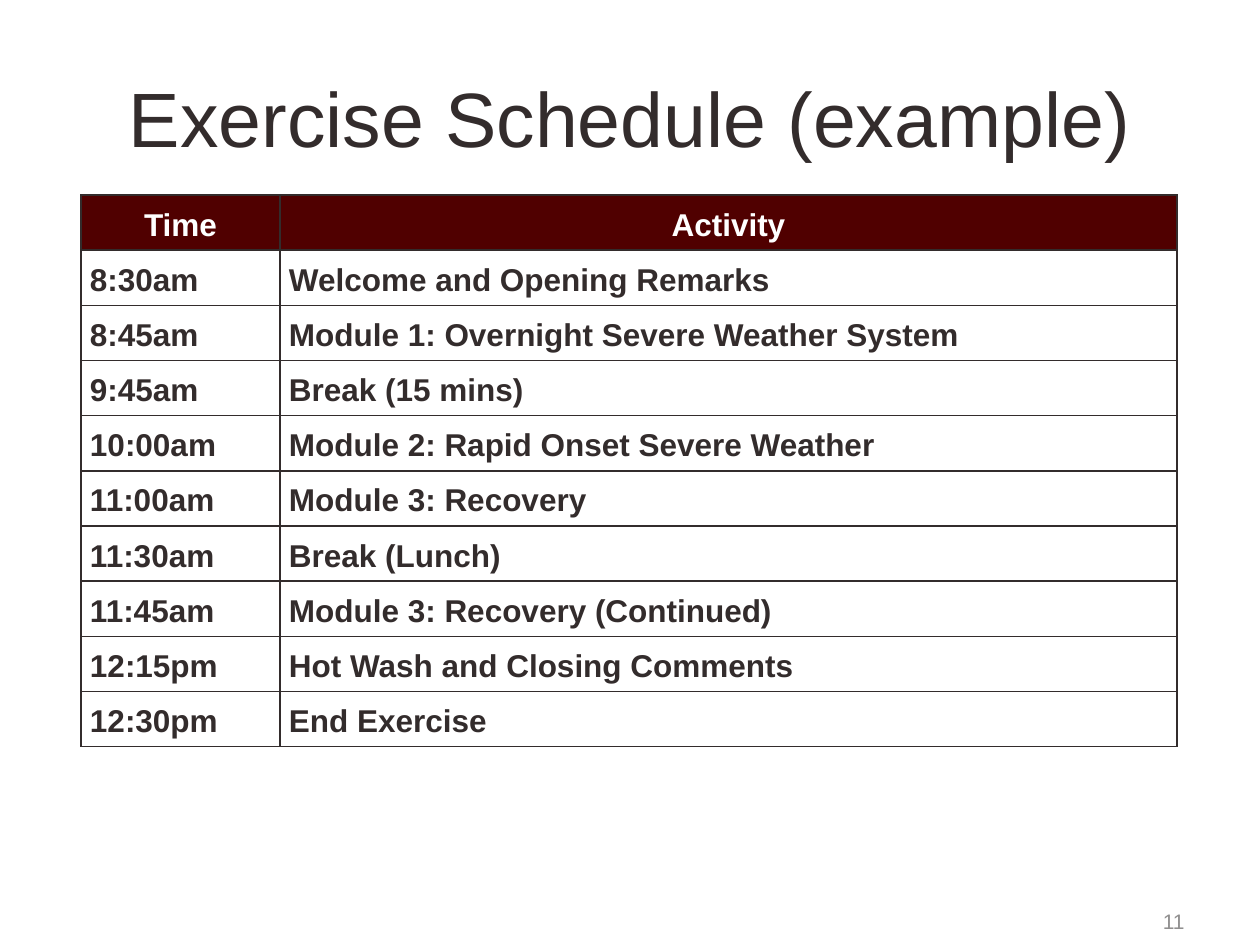
from dataclasses import dataclass

from lxml import etree
from pptx import Presentation
from pptx import util as u
from pptx.dml.color import RGBColor
from pptx.enum import text
from pptx.oxml.ns import qn


@dataclass(frozen=True)
class Theme:
    font: str = "Arial"
    ink: str = "332C2C"
    header_fill: str = "500000"
    header_ink: str = "FFFFFF"
    muted: str = "908F8F"
    title_size: int = 44
    table_size: int = 18
    number_size: int = 12
    border_width: int = 1


theme = Theme()
PX_PER_INCH = 126


def px(length):
    return u.Emu(round(length * 914400 / PX_PER_INCH))


def add_run(paragraph, words, size, color, bold=False):
    run = paragraph.add_run()
    run.text = words
    run.font.name = theme.font
    run.font.size = u.Pt(size)
    run.font.bold = bold
    run.font.color.rgb = RGBColor.from_string(color)


schedule = [
    ("Time", "Activity"),
    ("8:30am", "Welcome and Opening Remarks"),
    ("8:45am", "Module 1: Overnight Severe Weather System"),
    ("9:45am", "Break (15 mins)"),
    ("10:00am", "Module 2: Rapid Onset Severe Weather"),
    ("11:00am", "Module 3: Recovery"),
    ("11:30am", "Break (Lunch)"),
    ("11:45am", "Module 3: Recovery (Continued)"),
    ("12:15pm", "Hot Wash and Closing Comments"),
    ("12:30pm", "End Exercise"),
]

presentation = Presentation()
presentation.slide_width = px(1260)
presentation.slide_height = px(945)
slide = presentation.slides.add_slide(presentation.slide_layouts[5])

# Title
title = slide.shapes.title
title.left, title.top, title.width, title.height = px(63), px(38), px(1134), px(157)
title.text_frame.vertical_anchor = text.MSO_ANCHOR.MIDDLE
paragraph = title.text_frame.paragraphs[0]
paragraph.alignment = text.PP_ALIGN.CENTER
add_run(paragraph, "Exercise Schedule (example)", theme.title_size, theme.ink)

# Schedule table
column_widths = (199, 897)
table_height = 552
frame = slide.shapes.add_table(len(schedule), len(column_widths), px(81), px(195),
                               px(sum(column_widths)), px(table_height))
table = frame.table
for column, width in zip(table.columns, column_widths):
    column.width = px(width)

for row_index, entries in enumerate(schedule):
    is_header = row_index == 0
    table.rows[row_index].height = px(table_height / len(schedule))
    for column_index, words in enumerate(entries):
        cell = table.cell(row_index, column_index)
        cell.margin_left = cell.margin_right = px(9)
        cell.margin_top = cell.margin_bottom = 0
        cell.vertical_anchor = text.MSO_ANCHOR.MIDDLE

        paragraph = cell.text_frame.paragraphs[0]
        paragraph.alignment = text.PP_ALIGN.CENTER if is_header else text.PP_ALIGN.LEFT
        paragraph.line_spacing = 1.15
        add_run(paragraph, words, theme.table_size,
                theme.header_ink if is_header else theme.ink, bold=True)

        # Borders come before the fill in the cell properties
        properties = cell._tc.get_or_add_tcPr()
        for side in ("a:lnL", "a:lnR", "a:lnT", "a:lnB"):
            border = etree.SubElement(properties, qn(side), w=str(u.Pt(theme.border_width)))
            border_fill = etree.SubElement(border, qn("a:solidFill"))
            etree.SubElement(border_fill, qn("a:srgbClr"), val=theme.ink)
        if is_header:
            cell.fill.solid()
            cell.fill.fore_color.rgb = RGBColor.from_string(theme.header_fill)
        else:
            cell.fill.background()

# Slide number
number_box = slide.shapes.add_textbox(px(903), px(905), px(294), px(32))
number_box.text_frame.word_wrap = True
number_box.text_frame.vertical_anchor = text.MSO_ANCHOR.MIDDLE
paragraph = number_box.text_frame.paragraphs[0]
paragraph.alignment = text.PP_ALIGN.RIGHT
add_run(paragraph, "11", theme.number_size, theme.muted)

presentation.save("out.pptx")
